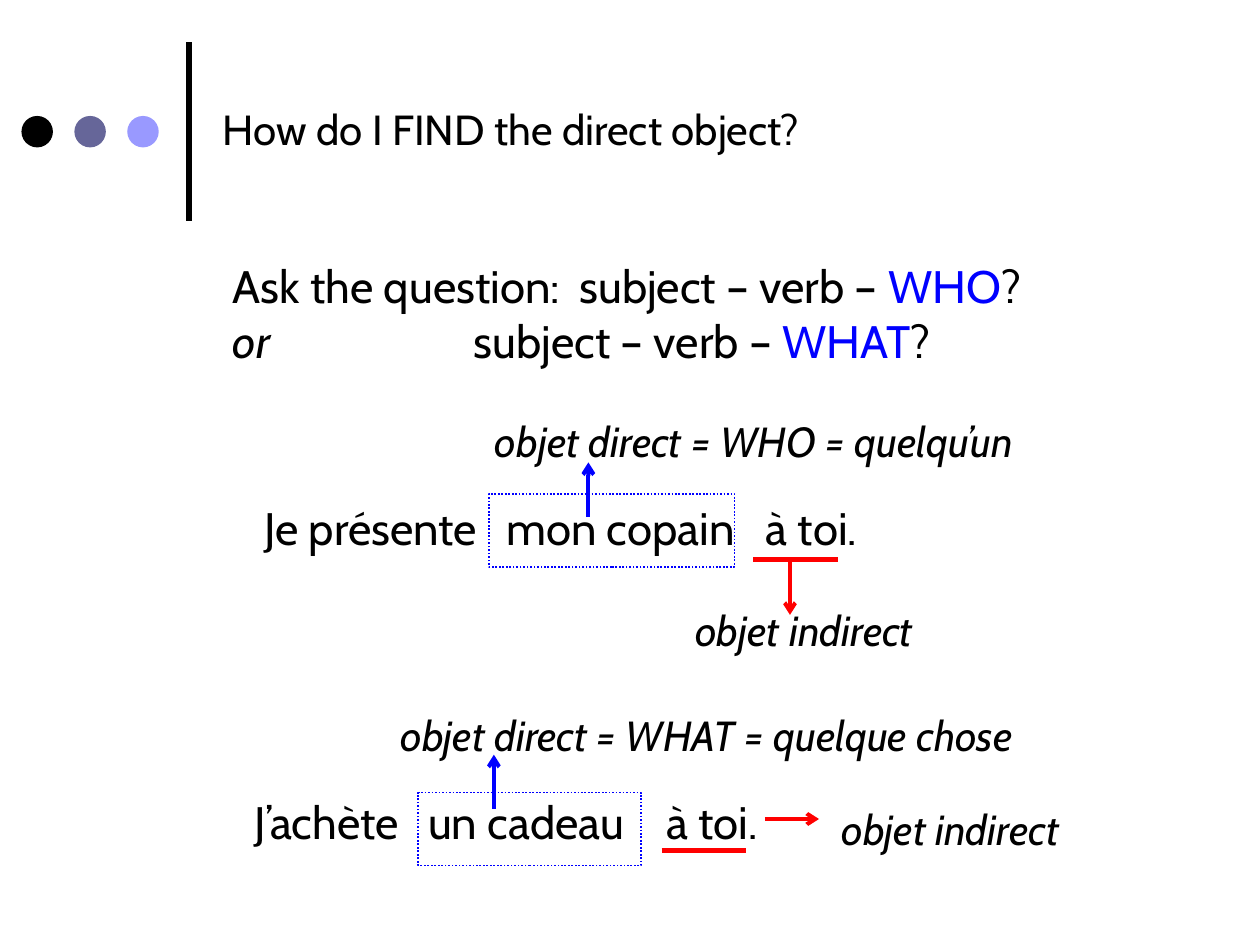
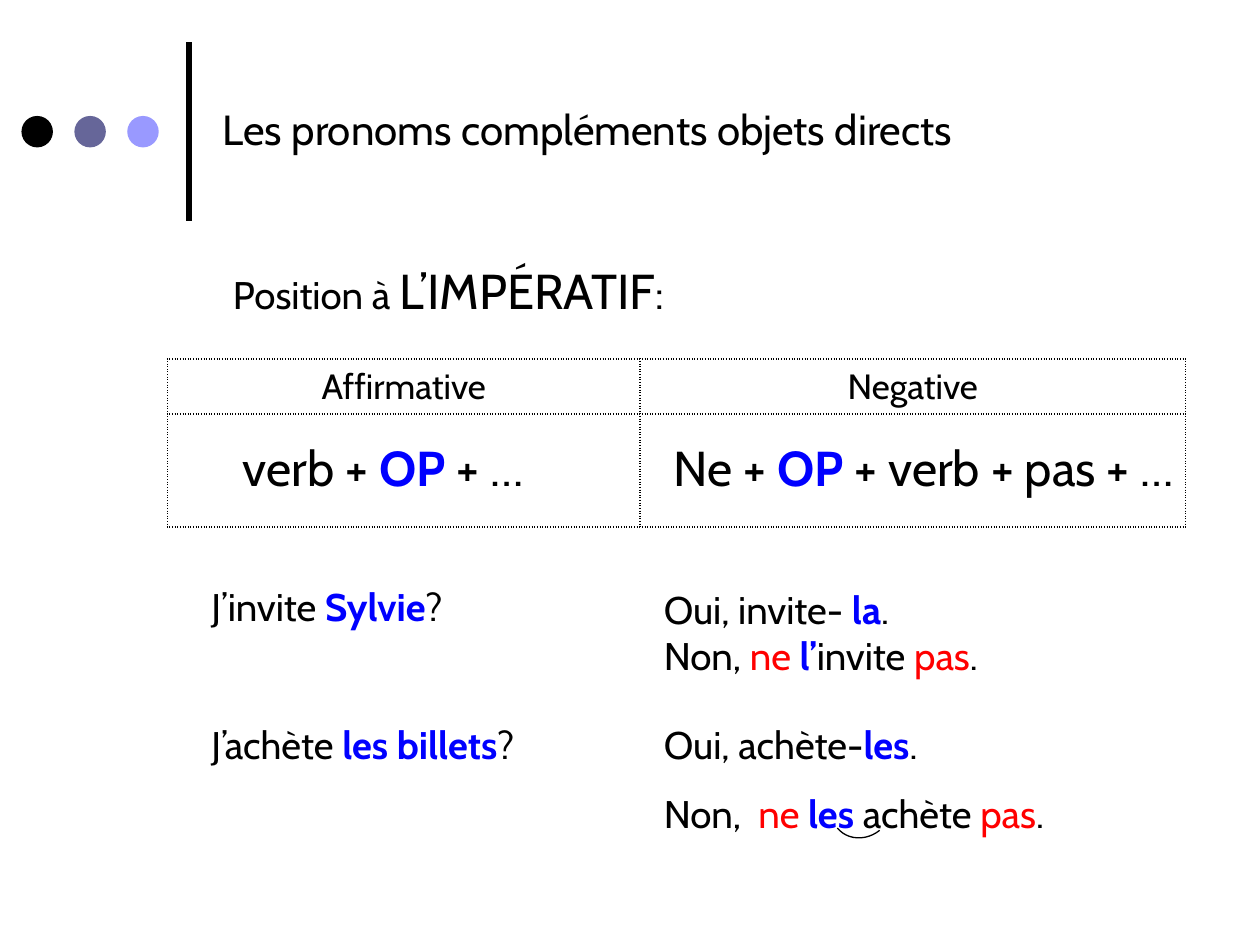
from lxml import etree
from pptx import Presentation
from pptx.dml.color import RGBColor
from pptx.enum.dml import MSO_LINE
from pptx.enum.shapes import MSO_CONNECTOR, MSO_SHAPE
from pptx.enum.text import MSO_AUTO_SIZE, PP_ALIGN
from pptx.oxml.ns import qn
from pptx.util import Emu, Pt

PX = 9144  # EMU per px, 100 px to the inch
FONT = "Cabin"
COLORS = {"black": "000000", "slate": "666699", "lilac": "9999FF",
          "blue": "0000FF", "red": "FF0000"}
DOTTED = MSO_LINE.ROUND_DOT
STRAIGHT = MSO_CONNECTOR.STRAIGHT
OVAL, RECT, ARC = MSO_SHAPE.OVAL, MSO_SHAPE.RECTANGLE, MSO_SHAPE.ARC
GROW = MSO_AUTO_SIZE.SHAPE_TO_FIT_TEXT
CENTER = PP_ALIGN.CENTER

# Run styles
BLUE = {"color": "blue"}
RED = {"color": "red"}
PRONOUN = {"color": "blue", "bold": True}

# Text: (left, top, width, height), size, paragraphs, options.
# A paragraph is a list of runs: a string, or (string, style).
FIND_TITLE = "How do I FIND the direct object?"
FIND_TEXTS = [
    ((175, 200, 758, 98), 26,
     [["Ask the question:\tsubject – verb – ", ("WHO", BLUE), "?"],
      [("or", {"italic": True}), "\tsubject – verb – ", ("WHAT", BLUE), "?"]],
     {"tabs": [[275], [191]]}),
    ((200, 392, 650, 54), 26, [["Je présente\tmon copain\tà toi."]],
     {"tabs": [[192, 398]]}),
    ((192, 625, 650, 54), 26, [["J’achète\tun cadeau\tà toi."]],
     {"tabs": [[138, 327]]}),
    ((383, 325, 467, 50), 24, [["objet direct = WHO = quelqu’un"]], {"italic": True}),
    ((308, 558, 567, 50), 24, [["objet direct = WHAT = quelque chose"]], {"italic": True}),
    ((542, 475, 217, 50), 24, [["objet indirect"]], {"italic": True}),
    ((658, 633, 217, 50), 24, [["objet indirect"]], {"italic": True}),
]
DIRECT_FRAMES = [(388, 392, 195, 58), (332, 629, 177, 58)]
# start x, y, end x, y, colour
ARROWS = [(467, 410, 467, 367, "blue"), (627, 444, 627, 488, "red"),
          (392, 642, 392, 599, "blue"), (607, 650, 650, 650, "red")]
UNDERLINES = [(598, 444), (525, 675)]
UNDERLINE_WIDTH = 67

ORDER_TITLE = "Les pronoms compléments objets directs"
ORDER_TABLE = {"at": (133, 285, 808, 133), "cols": (375, 433), "rows": (43, 90),
               "heads": ("Affirmative", "Negative")}
ORDER_TEXTS = [
    ((175, 202, 475, 57), 22,
     [["Position à ", ("L’IMPÉRATIF", {"size": 28}), (":", {"size": 24})]], {}),
    ((183, 342, 275, 57), 28, [["verb + ", ("OP", PRONOUN), " + …"]], {}),
    ((525, 342, 425, 57), 28, [["Ne + ", ("OP", PRONOUN), " + verb + pas + …"]], {}),
    ((158, 458, 342, 47), 22, [["J’invite ", ("Sylvie", PRONOUN), "?"]], {}),
    ((517, 460, 400, 84), 22,
     [["Oui, invite- ", ("la", PRONOUN), "."],
      ["Non, ", ("ne ", RED), ("l’", PRONOUN), "invite ", ("pas", RED), "."]], {}),
    ((158, 567, 342, 47), 22, [["J’achète ", ("les billets", PRONOUN), "?"]], {}),
    ((517, 567, 425, 103), 22,
     [["Oui, achète-", ("les", PRONOUN), "."],
      ["Non,\t", ("ne ", RED), ("les ", PRONOUN), "achète ", ("pas", RED), "."]],
     {"tabs": [[], [75]], "spacing": [1, 1.5]}),
]
LIAISON = (659, 619, 50, 45)
LIAISON_TURN = 141.1


def px(*values):
    return [Emu(v * PX) for v in values]


def rgb(name):
    return RGBColor.from_string(COLORS[name])


def set_font(font, size=None, color=None, bold=None, italic=None):
    if size:
        font.size = Pt(size)
    if color:
        font.color.rgb = rgb(color)
    if bold is not None:
        font.bold = bold
    if italic is not None:
        font.italic = italic


def set_base_font(p, size, italic=None):
    p.font.name = FONT
    set_font(p.font, size, "black", False, italic)


def add_tabs(p, stops):
    tabs = etree.SubElement(p._p.get_or_add_pPr(), qn("a:tabLst"))
    for stop in stops:
        etree.SubElement(tabs, qn("a:tab"), pos=str(stop * PX), algn="l")


def add_text(slide, at, size, paragraphs, tabs=(), spacing=(), italic=None):
    tf = slide.shapes.add_textbox(*px(*at)).text_frame
    tf.word_wrap = True
    tf.auto_size = GROW
    for i, runs in enumerate(paragraphs):
        p = tf.add_paragraph() if i else tf.paragraphs[0]
        if tabs and tabs[i]:
            add_tabs(p, tabs[i])
        if spacing:
            p.line_spacing = float(spacing[i])
        set_base_font(p, size, italic)
        for run in runs:
            text, style = (run, {}) if isinstance(run, str) else run
            r = p.add_run()
            r.text = text
            set_font(r.font, **style)


def add_shape(slide, kind, at, fill=None, line=None, width=1, dash=None):
    sp = slide.shapes.add_shape(kind, *px(*at))
    sp.shadow.inherit = False
    if fill:
        sp.fill.solid()
        sp.fill.fore_color.rgb = rgb(fill)
    else:
        sp.fill.background()
    if line:
        sp.line.color.rgb = rgb(line)
        sp.line.width = Pt(width)
        sp.line.dash_style = dash
    else:
        sp.line.fill.background()
    return sp


def add_line(slide, ends, color, width, arrow=False):
    line = slide.shapes.add_connector(STRAIGHT, *px(*ends))
    line.line.color.rgb = rgb(color)
    line.line.width = Pt(width)
    if arrow:
        etree.SubElement(line.line._get_or_add_ln(), qn("a:tailEnd"), type="arrow")
    etree.SubElement(line._element.spPr, qn("a:effectLst"))


def border_cell(cell):
    tc_pr = cell._tc.get_or_add_tcPr()
    for i, side in enumerate(("lnL", "lnR", "lnT", "lnB")):
        ln = etree.Element(qn("a:" + side), w=str(Pt(1)))
        fill = etree.SubElement(ln, qn("a:solidFill"))
        etree.SubElement(fill, qn("a:srgbClr"), val=COLORS["black"])
        etree.SubElement(ln, qn("a:prstDash"), val="sysDot")
        tc_pr.insert(i, ln)


def add_order_table(slide, at, cols, rows, heads):
    table = slide.shapes.add_table(len(rows), len(cols), *px(*at)).table
    table.first_row = table.horz_banding = False
    for column, width in zip(table.columns, px(*cols)):
        column.width = width
    for row, height in zip(table.rows, px(*rows)):
        row.height = height
    for cell in table.iter_cells():
        cell.fill.background()
        border_cell(cell)
    for i, head in enumerate(heads):
        p = table.cell(0, i).text_frame.paragraphs[0]
        p.alignment = CENTER
        set_base_font(p, 20)
        p.add_run().text = head


def add_titled_slide(prs, title):
    slide = prs.slides.add_slide(prs.slide_layouts[6])
    add_line(slide, (150, 175, 150, 33), "black", 3)
    for i, color in enumerate(("black", "slate", "lilac")):
        add_shape(slide, OVAL, (17 + 42 * i, 92, 25, 25), fill=color)
    add_text(slide, (167, 77, 750, 51), 24, [[title]])
    return slide


def build_find_slide(prs):
    slide = add_titled_slide(prs, FIND_TITLE)
    for at, size, paragraphs, options in FIND_TEXTS:
        add_text(slide, at, size, paragraphs, **options)
    for at in DIRECT_FRAMES:
        add_shape(slide, RECT, at, line="blue", dash=DOTTED)
    for *ends, color in ARROWS:
        add_line(slide, ends, color, 2.25, arrow=True)
    for x, y in UNDERLINES:
        add_line(slide, (x, y, x + UNDERLINE_WIDTH, y), "red", 3)


def build_order_slide(prs):
    slide = add_titled_slide(prs, ORDER_TITLE)
    add_order_table(slide, **ORDER_TABLE)
    for at, size, paragraphs, options in ORDER_TEXTS:
        add_text(slide, at, size, paragraphs, **options)
    liaison = add_shape(slide, ARC, LIAISON, line="black", width=0.75)
    liaison.rotation = LIAISON_TURN


def main():
    prs = Presentation()
    prs.slide_width, prs.slide_height = px(1000, 750)
    build_find_slide(prs)
    build_order_slide(prs)
    prs.save("out.pptx")


if __name__ == "__main__":
    main()
